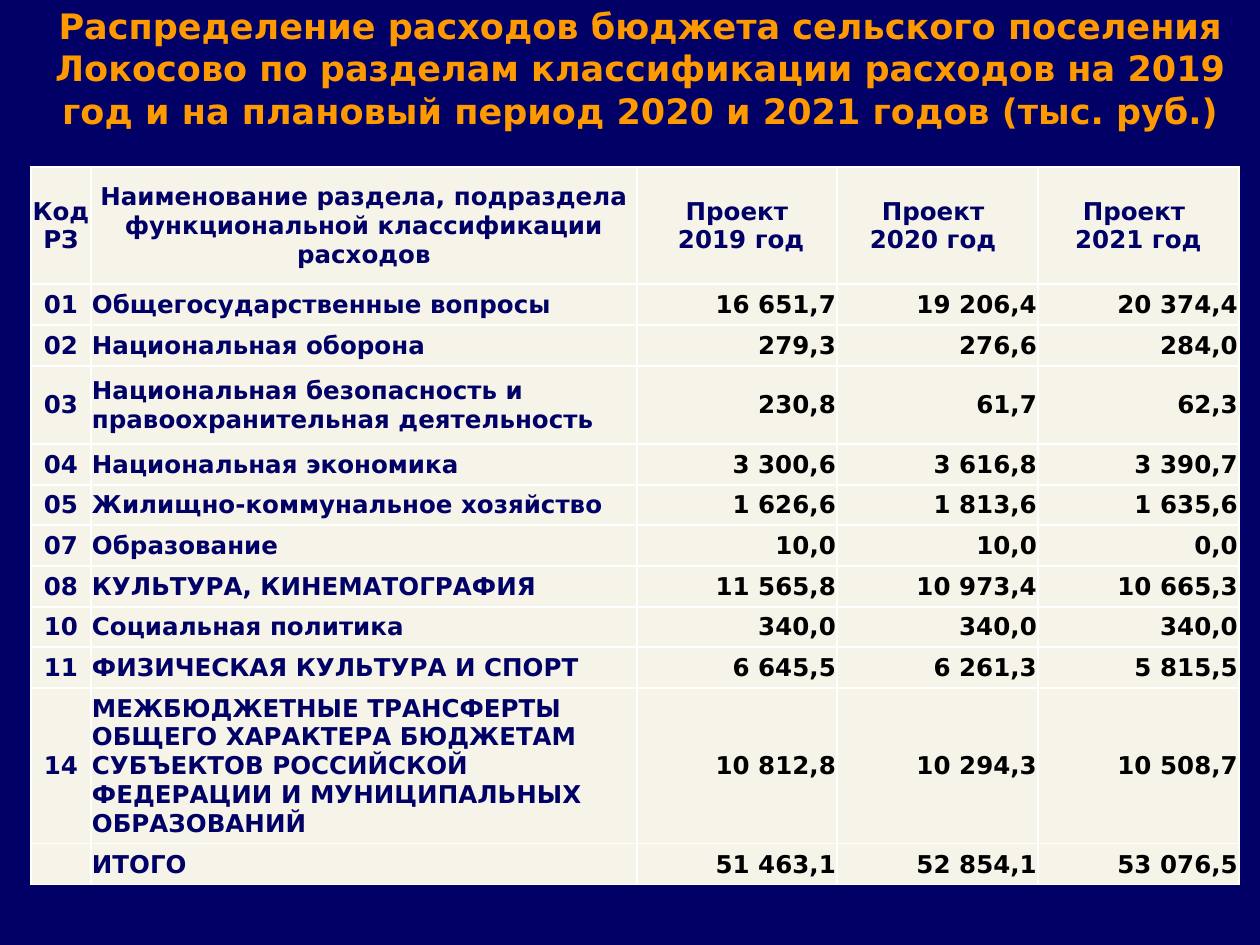
import dataclasses

import lxml.etree
import pptx
import pptx.dml.color
import pptx.enum.text
import pptx.oxml.ns
import pptx.util

PIXELS_PER_INCH = 126
FONT_NAME = "DejaVu Sans"
NAVY = "000066"
ORANGE = "FF9900"
CREAM = "F6F3E8"
BLACK = "000000"
WHITE = "FFFFFF"
LEFT = pptx.enum.text.PP_ALIGN.LEFT
CENTER = pptx.enum.text.PP_ALIGN.CENTER
RIGHT = pptx.enum.text.PP_ALIGN.RIGHT
MIDDLE = pptx.enum.text.MSO_ANCHOR.MIDDLE
COLUMN_WIDTHS = (60, 546, 200, 201, 201)
COLUMN_ALIGNMENTS = (CENTER, LEFT, RIGHT, RIGHT, RIGHT)
FIRST_AMOUNT_COLUMN = 2
TITLE = (
    "Распределение расходов бюджета сельского поселения Локосово по разделам "
    "классификации расходов на 2019 год и на плановый период 2020 и 2021 годов "
    "(тыс. руб.)"
)


@dataclasses.dataclass(frozen=True)
class BudgetRow:
    height: int
    code: str
    name: str
    amounts: tuple[str, str, str]
    is_header: bool = False


BUDGET_ROWS = (
    BudgetRow(
        117,
        "Код РЗ",
        "Наименование раздела, подраздела функциональной классификации расходов",
        ("Проект\n 2019 год", "Проект \n2020 год ", "Проект \n2021 год"),
        is_header=True,
    ),
    BudgetRow(41, "01", "Общегосударственные вопросы", ("16 651,7", "19 206,4", "20 374,4")),
    BudgetRow(41, "02", "Национальная оборона", ("279,3", "276,6", "284,0")),
    BudgetRow(
        78,
        "03",
        "Национальная безопасность и правоохранительная деятельность",
        ("230,8", "61,7", "62,3"),
    ),
    BudgetRow(41, "04", "Национальная экономика", ("3 300,6", "3 616,8", "3 390,7")),
    BudgetRow(40, "05", "Жилищно-коммунальное хозяйство", ("1 626,6", "1 813,6", "1 635,6")),
    BudgetRow(41, "07", "Образование", ("10,0", "10,0", "0,0")),
    BudgetRow(41, "08", "КУЛЬТУРА, КИНЕМАТОГРАФИЯ", ("11 565,8", "10 973,4", "10 665,3")),
    BudgetRow(40, "10", "Социальная политика", ("340,0", "340,0", "340,0")),
    BudgetRow(41, "11", "ФИЗИЧЕСКАЯ КУЛЬТУРА И СПОРТ", ("6 645,5", "6 261,3", "5 815,5")),
    BudgetRow(
        156,
        "14",
        "МЕЖБЮДЖЕТНЫЕ ТРАНСФЕРТЫ ОБЩЕГО ХАРАКТЕРА БЮДЖЕТАМ СУБЪЕКТОВ "
        "РОССИЙСКОЙ ФЕДЕРАЦИИ И МУНИЦИПАЛЬНЫХ ОБРАЗОВАНИЙ",
        ("10 812,8", "10 294,3", "10 508,7"),
    ),
    BudgetRow(41, "", "ИТОГО", ("51 463,1", "52 854,1", "53 076,5")),
)


def px(pixels: int) -> pptx.util.Emu:
    return pptx.util.Emu(round(pixels * 914400 / PIXELS_PER_INCH))


def color(value: str) -> pptx.dml.color.RGBColor:
    return pptx.dml.color.RGBColor.from_string(value)


def write_text(text_frame, text: str, size: int, text_color: str, alignment) -> None:
    text_frame.text = text
    text_frame.word_wrap = True
    for paragraph in text_frame.paragraphs:
        paragraph.alignment = alignment
        for run in paragraph.runs:
            run.font.name = FONT_NAME
            run.font.size = pptx.util.Pt(size)
            run.font.bold = True
            run.font.color.rgb = color(text_color)


def add_borders(cell, border_color: str) -> None:
    qn = pptx.oxml.ns.qn
    properties = cell._tc.get_or_add_tcPr()
    for side in ("lnL", "lnR", "lnT", "lnB"):
        line = lxml.etree.SubElement(properties, qn(f"a:{side}"), w=str(pptx.util.Pt(1)))
        fill = lxml.etree.SubElement(line, qn("a:solidFill"))
        lxml.etree.SubElement(fill, qn("a:srgbClr"), val=border_color)


def format_cell(cell, text: str, text_color: str, alignment) -> None:
    write_text(cell.text_frame, text, 14, text_color, alignment)
    cell.vertical_anchor = MIDDLE
    cell.margin_left = cell.margin_right = cell.margin_top = px(1)
    cell.margin_bottom = px(0)
    add_borders(cell, WHITE)
    cell.fill.solid()
    cell.fill.fore_color.rgb = color(CREAM)


def add_title(slide) -> None:
    title = slide.shapes.add_textbox(px(21), px(0), px(1239), px(136))
    write_text(title.text_frame, TITLE, 20, ORANGE, CENTER)
    title.text_frame.vertical_anchor = MIDDLE


def add_budget_table(slide) -> None:
    table_height = sum(row.height for row in BUDGET_ROWS)
    table = slide.shapes.add_table(
        len(BUDGET_ROWS), len(COLUMN_WIDTHS),
        px(31), px(167), px(sum(COLUMN_WIDTHS)), px(table_height),
    ).table
    for column, width in zip(table.columns, COLUMN_WIDTHS):
        column.width = px(width)
    for row_index, row in enumerate(BUDGET_ROWS):
        table.rows[row_index].height = px(row.height)
        for column_index, text in enumerate((row.code, row.name, *row.amounts)):
            is_amount = column_index >= FIRST_AMOUNT_COLUMN and not row.is_header
            format_cell(
                table.cell(row_index, column_index),
                text,
                BLACK if is_amount else NAVY,
                CENTER if row.is_header else COLUMN_ALIGNMENTS[column_index],
            )


def main() -> None:
    presentation = pptx.Presentation()
    presentation.slide_width = px(1260)
    presentation.slide_height = px(945)
    slide = presentation.slides.add_slide(presentation.slide_layouts[6])
    slide.background.fill.solid()
    slide.background.fill.fore_color.rgb = color(NAVY)
    add_title(slide)
    add_budget_table(slide)
    presentation.save("out.pptx")


if __name__ == "__main__":
    main()
